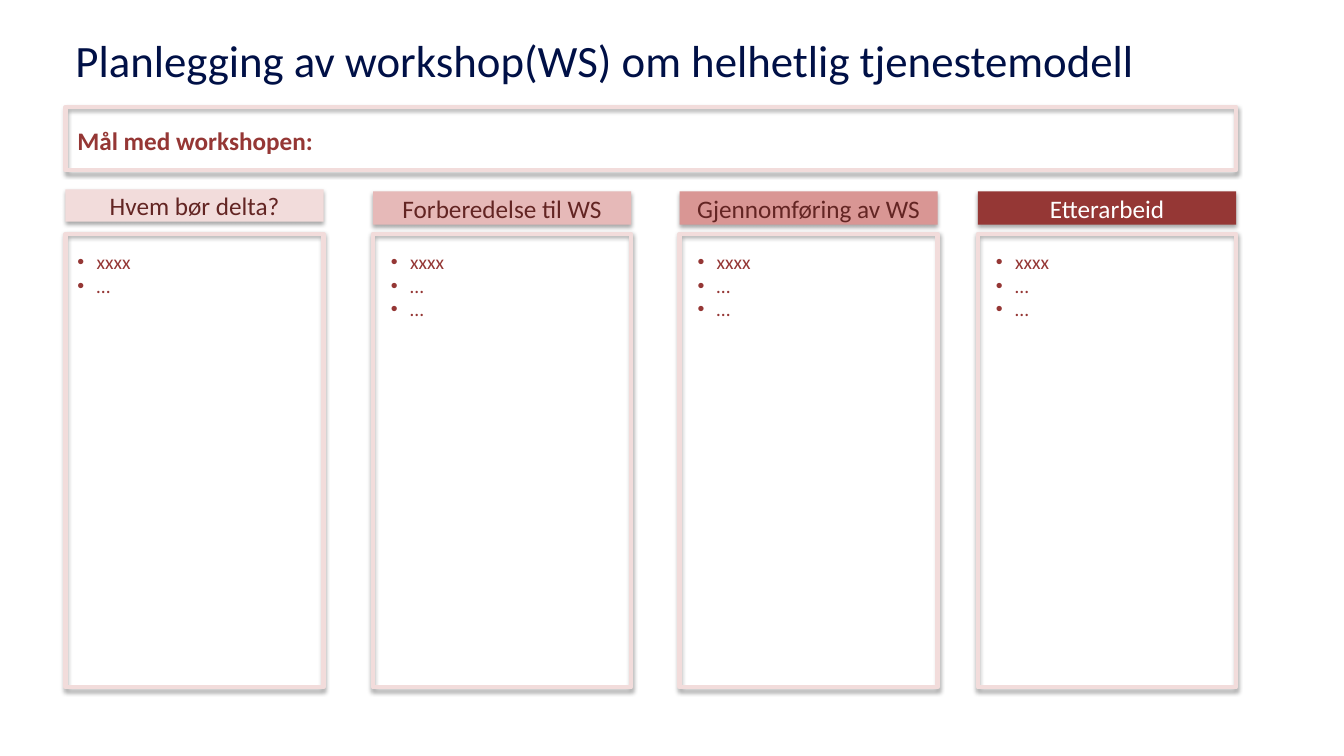
from lxml import etree
from pptx import Presentation, util as u
from pptx.dml.color import RGBColor
from pptx.enum import shapes, text
from pptx.oxml import ns

PX = 9144  # EMU per px, 100 px to the inch
COLOURS = {
    "navy": "001046",
    "blush": "F2DCDB",
    "rose": "E6B9B8",
    "coral": "D99694",
    "wine": "953735",
    "maroon": "632523",
    "white": "FFFFFF",
    "black": "000000",
}


def rgb(colour):
    return RGBColor.from_string(COLOURS[colour])


def add_child(parent, tag, **attributes):
    return etree.SubElement(parent, ns.qn(tag), attributes)


class Board:
    font = "Calibri"
    frame_width = 3

    def __init__(self, slide):
        self.slide = slide

    def fill_text(self, frame, lines, size, colour, bold=False, align=None, bullet=None):
        for index, line in enumerate(lines):
            paragraph = frame.add_paragraph() if index else frame.paragraphs[0]
            paragraph.text = line
            if align is not None:
                paragraph.alignment = align
            if bullet:
                properties = paragraph._p.get_or_add_pPr()
                indent = 19 * PX
                properties.set("marL", str(indent))
                properties.set("indent", str(-indent))
                add_child(properties, "a:buFont", typeface="Arial")
                add_child(properties, "a:buChar", char=bullet)
            font = paragraph.font
            font.name, font.size, font.bold = self.font, u.Pt(size), bold
            font.color.rgb = rgb(colour)

    def label(self, box, lines, size, colour, anchor=text.MSO_ANCHOR.TOP, **style):
        frame = self.slide.shapes.add_textbox(*(n * PX for n in box)).text_frame
        frame.word_wrap = True
        frame.vertical_anchor = anchor
        self.fill_text(frame, lines, size, colour, **style)

    def shadowed_box(self, box):
        shape = self.slide.shapes.add_shape(
            shapes.MSO_SHAPE.RECTANGLE, *(n * PX for n in box))
        shape.shadow.inherit = False
        effects = shape._element.spPr.find(ns.qn("a:effectLst"))
        shadow = add_child(effects, "a:outerShdw", blurRad=str(u.Pt(3.1)),
                           dist=str(u.Pt(1.8)), dir="5400000", rotWithShape="0")
        tint = add_child(shadow, "a:srgbClr", val=COLOURS["black"])
        add_child(tint, "a:alpha", val="35000")
        return shape

    def header(self, box, caption, fill, colour):
        shape = self.shadowed_box(box)
        shape.fill.solid()
        shape.fill.fore_color.rgb = rgb(fill)
        shape.line.fill.background()
        shape.text_frame.vertical_anchor = text.MSO_ANCHOR.MIDDLE
        self.fill_text(shape.text_frame, [caption], 18, colour,
                       align=text.PP_ALIGN.CENTER)

    def frame(self, box):
        shape = self.shadowed_box(box)
        shape.fill.background()
        shape.line.color.rgb = rgb("blush")
        shape.line.width = u.Pt(self.frame_width)


def main():
    deck = Presentation()
    deck.slide_width, deck.slide_height = 1333 * PX, 750 * PX
    board = Board(deck.slides.add_slide(deck.slide_layouts[6]))

    board.label((65, -3, 1260, 124),
                ["Planlegging av workshop(WS) om helhetlig tjenestemodell"],
                32, "navy", anchor=text.MSO_ANCHOR.MIDDLE)
    board.frame((65, 106, 1161, 63))
    board.label((67, 119, 394, 40), ["Mål med workshopen:"], 18, "wine", bold=True)

    # left, header top, header height, list inset, caption, fill, text colour, items
    phases = [
        (65, 188, 32, 2, "Hvem bør delta?", "blush", "maroon", ["xxxx", "…"]),
        (370, 190, 33, 8, "Forberedelse til WS", "rose", "maroon", ["xxxx", "…", "…"]),
        (674, 190, 33, 8, "Gjennomføring av WS", "coral", "maroon", ["xxxx", "…", "…"]),
        (970, 190, 33, 8, "Etterarbeid", "wine", "white", ["xxxx", "…", "…"]),
    ]
    width = 256
    for left, top, height, inset, caption, fill, colour, items in phases:
        board.header((left, top, width, height), caption, fill, colour)
        board.frame((left, 232, width, 450))
        board.label((left + inset, 243, 240, 101), items, 14, "wine", bullet="•")

    deck.save("out.pptx")


if __name__ == "__main__":
    main()
